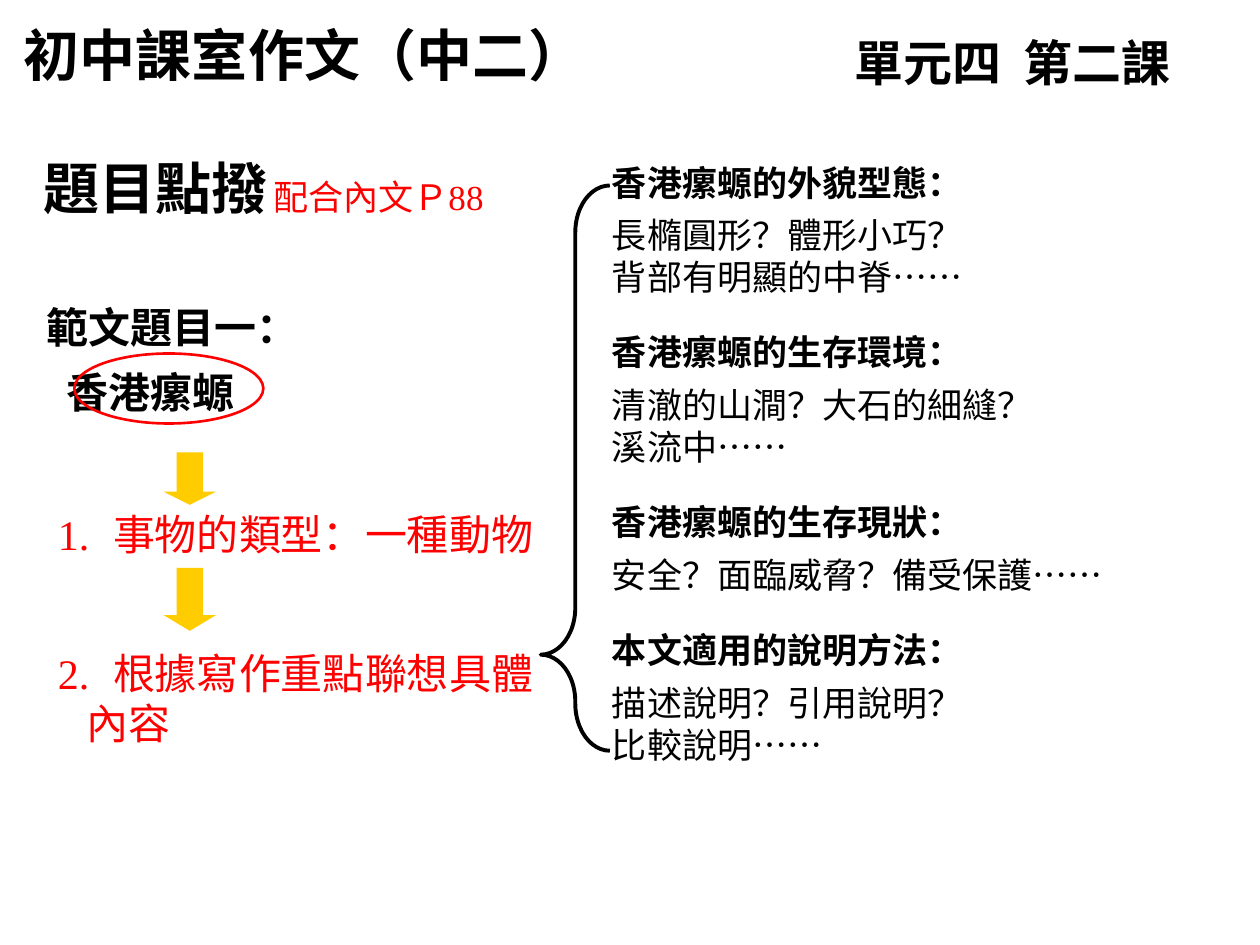
"""Build the slide on guided writing for a junior class."""
from lxml import etree
from pptx import Presentation
from pptx.dml.color import RGBColor
from pptx.enum.shapes import MSO_SHAPE as Shape
from pptx.enum.text import MSO_ANCHOR as Anchor, MSO_AUTO_SIZE as Auto, PP_ALIGN as Align
from pptx.oxml.ns import qn
from pptx.util import Pt

tint = RGBColor.from_string
BLACK, RED, GOLD = "000000", "FF0000", "FFCC00"
SANS, SERIF = "DejaVu Sans", "Times New Roman"


def place(item, left, top, width, height):
    item.left, item.top = Pt(left), Pt(top)
    item.width, item.height = Pt(width), Pt(height)
    frame = item.text_frame
    frame.word_wrap = True
    frame.auto_size = Auto.NONE
    frame.vertical_anchor = Anchor.TOP
    return frame


def style(para, size, face, color=BLACK, bold=False, left=0, first=0):
    para.alignment = Align.LEFT
    props = para._p.get_or_add_pPr()
    props.set("marL", str(Pt(left)))
    props.set("indent", str(Pt(first)))
    etree.SubElement(props, qn("a:buNone"))
    font = para.font
    font.size, font.name, font.bold = Pt(size), face, bold
    font.color.rgb = tint(color)


deck = Presentation()
deck.slide_width, deck.slide_height = Pt(720), Pt(540)
slide = deck.slides.add_slide(deck.slide_layouts[1])
shapes = slide.shapes
title, body = slide.placeholders

frame = place(title, 6.5, 8, 376, 45.5)
frame.text = "初中課室作文（中二）"
style(frame.paragraphs[0], 32, "Karla", bold=True)

labels = [
    ((481.5, 15, 241, 41), "單元四\t第二課", 28, "Karla", BLACK, True, 96.5, -96.5),
    ((18, 84, 222, 45.5), "題目點撥", 32, "Arial", BLACK, True, 0, 0),
    ((149, 97, 178, 31), "配合內文Ｐ88", 20, SERIF, RED, False, 0, 0),
]
for spot, text, size, face, color, bold, left, first in labels:
    frame = place(shapes.add_textbox(0, 0, 0, 0), *spot)
    frame.text = text
    style(frame.paragraphs[0], size, face, color, bold, left, first)

frame = place(shapes.add_textbox(0, 0, 0, 0), 19.5, 160, 360, 82)
frame.text = "範文題目一：\n香港瘰螈"
for para, left in zip(frame.paragraphs, (0, 11.5)):
    para.line_spacing = 1.3
    style(para, 24, SANS, bold=True, left=left)

steps = [
    (287, 36, "1.", "事物的類型：一種動物", ""),
    (366.5, 65, "2.", "根據寫作重點聯想具體", "內容"),
]
for top, height, mark, text, more in steps:
    frame = place(shapes.add_textbox(0, 0, 0, 0), 26, top, 300, height)
    para = frame.paragraphs[0]
    style(para, 24, SANS, RED, left=31.5, first=-31.5)
    run = para.add_run()
    run.text = mark
    run.font.name = SERIF
    para.add_run().text = "\t" + text
    if more:
        para = frame.add_paragraph()
        para.text = more
        style(para, 24, SANS, RED, left=16.5)

for top, height, head in ((258.5, 30, 0.25), (324.5, 36, 0.3)):
    arrow = shapes.add_shape(Shape.DOWN_ARROW, Pt(93.5), Pt(top), Pt(30), Pt(height))
    arrow.adjustments[1] = head
    arrow.shadow.inherit = False
    arrow.fill.solid()
    arrow.fill.fore_color.rgb = tint(GOLD)
    arrow.line.fill.background()

ring = shapes.add_shape(Shape.OVAL, Pt(42.5), Pt(202), Pt(108), Pt(40))
brace = shapes.add_shape(Shape.LEFT_BRACE, Pt(309), Pt(106), Pt(39.5), Pt(323))
brace.adjustments[0], brace.adjustments[1] = 0.68, 0.83
for mark, color, width in ((ring, RED, 1.5), (brace, BLACK, 2.25)):
    mark.shadow.inherit = False
    mark.fill.background()
    mark.line.color.rgb = tint(color)
    mark.line.width = Pt(width)

points = [
    ("香港瘰螈的外貌型態：", "長橢圓形？體形小巧？\v背部有明顯的中脊"),
    ("香港瘰螈的生存環境：", "清澈的山澗？大石的細縫？\v溪流中"),
    ("香港瘰螈的生存現狀：", "安全？面臨威脅？備受保護"),
    ("本文適用的說明方法：", "描述說明？引用說明？\v比較說明"),
]
frame = place(body, 342.5, 88.5, 323, 391)
for rank, (head, text) in enumerate(points):
    para = frame.add_paragraph() if rank else frame.paragraphs[0]
    para.text = head
    para.space_before = Pt(19 if rank else 0)
    style(para, 20, "Arial", bold=True)
    para = frame.add_paragraph()
    para.text = text
    para.space_before = Pt(6)
    style(para, 20, SANS)
    run = para.add_run()
    run.text = "……"
    run.font.name = "Noto Sans CJK SC"

deck.save("out.pptx")
